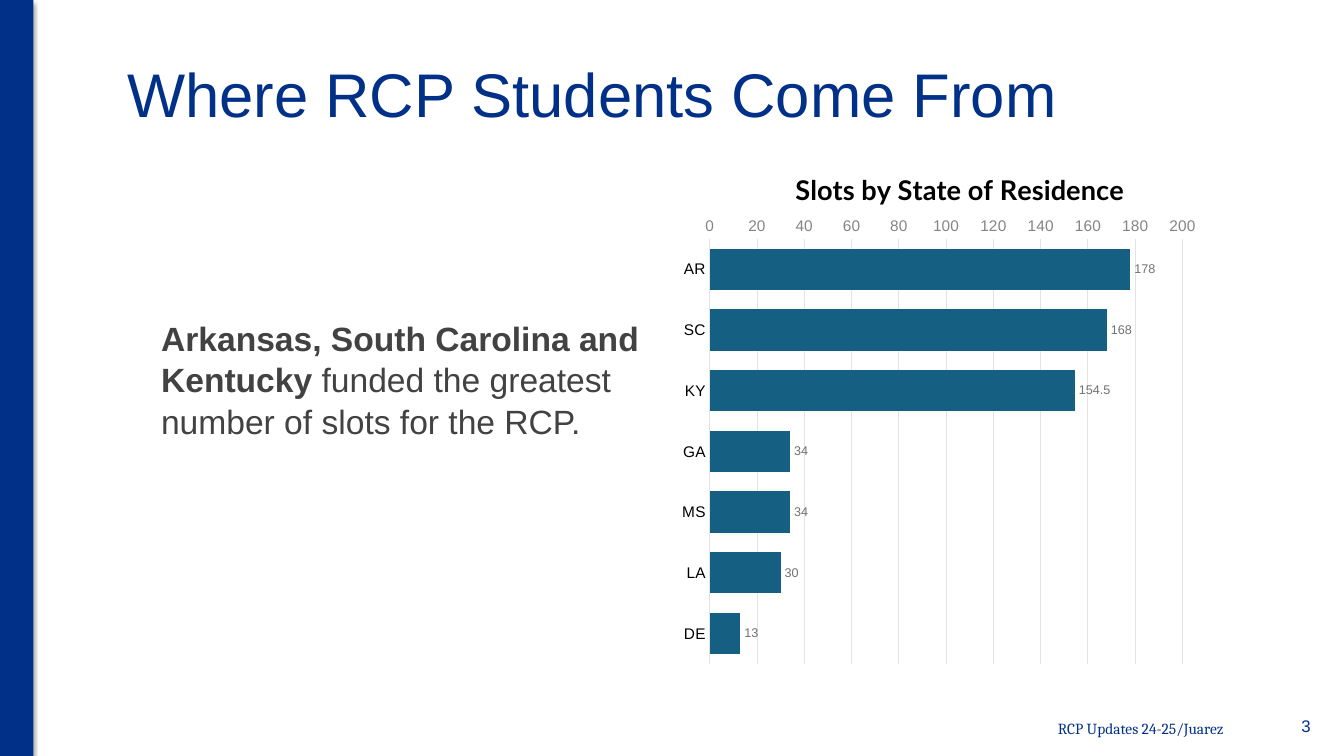
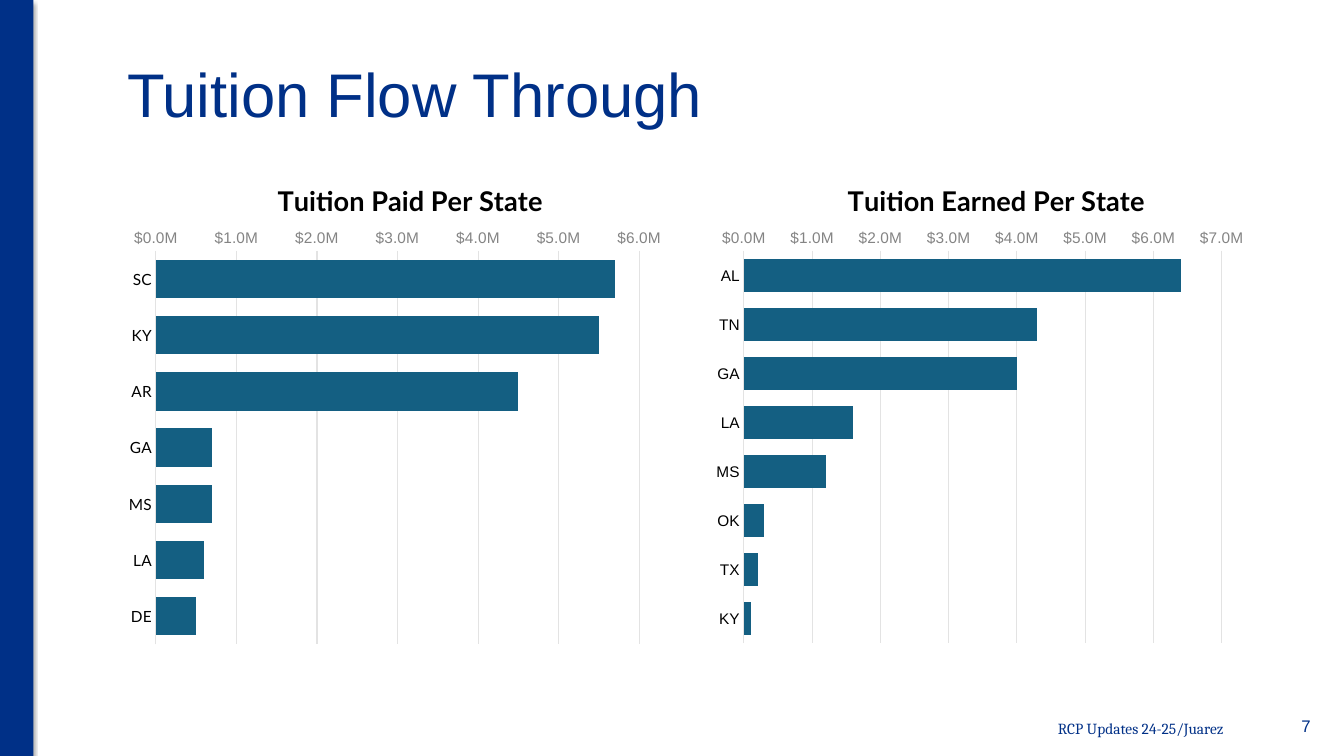
from dataclasses import dataclass
from typing import NamedTuple

import pptx
import pptx.chart.data
import pptx.dml.color
import pptx.enum.chart
import pptx.enum.shapes
import pptx.enum.text
import pptx.oxml
import pptx.oxml.ns
import pptx.util

Cm = pptx.util.Cm
Pt = pptx.util.Pt
RGB = pptx.dml.color.RGBColor.from_string
Align = pptx.enum.text.PP_ALIGN
Anchor = pptx.enum.text.MSO_ANCHOR
qn = pptx.oxml.ns.qn


@dataclass(frozen=True)
class Theme:
    navy: str = "003087"
    teal: str = "145F82"
    body: str = "424242"
    black: str = "000000"
    scale: str = "848484"
    value: str = "717171"
    grid: str = "E3E3E3"
    sans: str = "Arial"
    serif: str = "Cambria"
    heading: str = "Lato"
    title_size: float = 44
    body_size: float = 24
    chart_title_size: float = 19.4
    number_size: float = 12
    small_size: float = 11
    chart_size: float = 10
    value_size: float = 9


THEME = Theme()


class Box(NamedTuple):
    left: float
    top: float
    width: float
    height: float

    def lengths(self) -> tuple:
        return tuple(Cm(side) for side in self)


@dataclass(frozen=True)
class Style:
    size: float
    color: str = THEME.navy
    font: str = THEME.sans
    bold: bool = False


class Span(NamedTuple):
    text: str
    style: Style


@dataclass(frozen=True)
class StateChart:
    title: str
    box: Box
    title_at: tuple[float, float]
    plot: Box
    values: dict[str, float]
    maximum: float
    step: float
    number_format: str = "General"
    state_font: str = THEME.sans
    show_values: bool = False


@dataclass(frozen=True)
class StateSlide:
    title: str
    number: int
    charts: list[StateChart]
    message: tuple[Span, ...] = ()


SLIDE = Box(0, 0, 33.87, 19.05)
SIDE_BAND = Box(0, 0, 0.84, SLIDE.height)
TITLE = Box(2.95, 0.76, 28.68, 3.18)
FOOTER = Box(19.43, 17.78, 11.66, 1.14)
NUMBER = Box(31.17, 17.73, 2.11, 1.14)
MESSAGE = Box(3.81, 7.85, 12.65, 3.33)
MILLIONS = '"$"0.0,,"M"'

SLIDES = [
    StateSlide(
        "Where RCP Students Come From", 3,
        [StateChart(
            "Slots by State of Residence", Box(16.94, 3.61, 13.54, 13.39),
            (0.22, 0.04), Box(0.07, 0.18, 0.88, 0.8),
            {"AR": 178, "SC": 168, "KY": 154.5, "GA": 34, "MS": 34, "LA": 30, "DE": 13},
            200, 20, show_values=True)],
        (Span("Arkansas, South Carolina and Kentucky",
              Style(THEME.body_size, THEME.body, bold=True)),
         Span(" funded the greatest number of slots for the RCP.",
              Style(THEME.body_size, THEME.body)))),
    StateSlide(
        "Tuition Flow Through", 7,
        [StateChart(
            "Tuition Paid Per State", Box(2.95, 3.94, 14, 12.55),
            (0.28, 0.04), Box(0.07, 0.19, 0.87, 0.79),
            {"SC": 5700000, "KY": 5500000, "AR": 4500000, "GA": 700000,
             "MS": 700000, "LA": 600000, "DE": 500000},
            6000000, 1000000, MILLIONS, THEME.heading),
         StateChart(
            "Tuition Earned Per State", Box(17.78, 3.94, 13.84, 12.52),
            (0.25, 0.04), Box(0.07, 0.19, 0.87, 0.79),
            {"AL": 6400000, "TN": 4300000, "GA": 4000000, "LA": 1600000,
             "MS": 1200000, "OK": 300000, "TX": 200000, "KY": 100000},
            7000000, 1000000, MILLIONS)]),
]


def set_font(font, style: Style) -> None:
    font.size = Pt(style.size)
    font.name = style.font
    font.bold = style.bold
    font.color.rgb = RGB(style.color)


def write(paragraph, *spans: Span) -> None:
    for span in spans:
        run = paragraph.add_run()
        run.text = span.text
        set_font(run.font, span.style)


def add_text(slide, box: Box, *spans: Span, align=Align.LEFT, anchor=Anchor.MIDDLE,
             spacing: float = 1.0) -> None:
    frame = slide.shapes.add_textbox(*box.lengths()).text_frame
    frame.word_wrap = True
    frame.vertical_anchor = anchor
    paragraph = frame.paragraphs[0]
    paragraph.alignment = align
    paragraph.line_spacing = spacing
    write(paragraph, *spans)


def add_side_band(slide) -> None:
    band = slide.shapes.add_shape(
        pptx.enum.shapes.MSO_SHAPE.RECTANGLE, *SIDE_BAND.lengths())
    band.fill.solid()
    band.fill.fore_color.rgb = RGB(THEME.navy)
    band.line.fill.background()
    band.shadow.inherit = False
    effects = band._element.spPr.find(qn("a:effectLst"))
    effects.append(pptx.oxml.parse_xml(
        f'<a:outerShdw {pptx.oxml.ns.nsdecls("a")} blurRad="{Pt(3.1)}" dist="{Pt(1.8)}"'
        ' dir="5400000" rotWithShape="0"><a:srgbClr val="000000">'
        '<a:alpha val="35000"/></a:srgbClr></a:outerShdw>'))


def place(parent, index: int, **settings) -> None:
    for old in parent.findall(qn("c:layout")):
        parent.remove(old)
    parts = "".join(f'<c:{key} val="{value}"/>' for key, value in settings.items())
    parent.insert(index, pptx.oxml.parse_xml(
        f'<c:layout {pptx.oxml.ns.nsdecls("c")}><c:manualLayout>{parts}'
        '</c:manualLayout></c:layout>'))


def add_chart_title(chart, spec_title: str, at: tuple[float, float]) -> None:
    chart.has_title = True
    title = chart.chart_title
    write(title.text_frame.paragraphs[0], Span(
        spec_title, Style(THEME.chart_title_size, THEME.black, THEME.heading, True)))
    title.include_in_layout = False
    place(title._element, 1, xMode="edge", yMode="edge", x=at[0], y=at[1])


def format_axes(chart, content: StateChart) -> None:
    none = pptx.enum.chart.XL_TICK_MARK.NONE
    states, amounts = chart.category_axis, chart.value_axis
    for axis in (states, amounts):
        axis.major_tick_mark = axis.minor_tick_mark = none
    states.reverse_order = True
    states.has_major_gridlines = False
    amounts.has_major_gridlines = True
    for line in (states.format.line, amounts.major_gridlines.format.line):
        line.color.rgb = RGB(THEME.grid)
        line.width = Pt(0.75)
    amounts.format.line.fill.background()
    amounts.minimum_scale = 0
    amounts.maximum_scale = content.maximum
    amounts.major_unit = content.step
    amounts.tick_labels.number_format = content.number_format
    amounts.tick_labels.number_format_is_linked = False
    set_font(states.tick_labels.font,
             Style(THEME.small_size, THEME.black, content.state_font))
    set_font(amounts.tick_labels.font, Style(THEME.small_size, THEME.scale))


def add_state_chart(slide, content: StateChart) -> None:
    data = pptx.chart.data.CategoryChartData()
    data.categories = list(content.values)
    data.add_series("Series 1", list(content.values.values()))
    chart = slide.shapes.add_chart(
        pptx.enum.chart.XL_CHART_TYPE.BAR_CLUSTERED, *content.box.lengths(), data).chart
    chart.has_legend = False
    set_font(chart.font, Style(THEME.chart_size, THEME.body))
    add_chart_title(chart, content.title, content.title_at)
    format_axes(chart, content)
    plot_area = chart._chartSpace.chart.plotArea
    place(plot_area, 0, layoutTarget="inner", xMode="edge", yMode="edge",
          x=content.plot.left, y=content.plot.top,
          w=content.plot.width, h=content.plot.height)
    bars = chart.plots[0]
    bars.gap_width = 47
    bars.vary_by_categories = False
    fill = bars.series[0].format.fill
    fill.solid()
    fill.fore_color.rgb = RGB(THEME.teal)
    if content.show_values:
        labels = bars.series[0].data_labels
        labels.show_value = True
        labels.position = pptx.enum.chart.XL_LABEL_POSITION.OUTSIDE_END
        set_font(labels.font, Style(THEME.value_size, THEME.value))


def add_title(slide, text: str) -> None:
    title = slide.shapes.title
    title.left, title.top, title.width, title.height = TITLE.lengths()
    frame = title.text_frame
    frame.auto_size = pptx.enum.text.MSO_AUTO_SIZE.NONE
    frame.vertical_anchor = Anchor.MIDDLE
    frame.paragraphs[0].alignment = Align.LEFT
    write(frame.paragraphs[0], Span(text, Style(THEME.title_size)))


def add_state_slide(deck, content: StateSlide) -> None:
    slide = deck.slides.add_slide(deck.slide_layouts.get_by_name("Title Only"))
    add_side_band(slide)
    add_title(slide, content.title)
    add_text(slide, FOOTER, Span("RCP Updates 24-25/Juarez",
             Style(THEME.small_size, font=THEME.serif)), align=Align.RIGHT)
    add_text(slide, NUMBER, Span(str(content.number), Style(THEME.number_size)),
             align=Align.RIGHT)
    for chart in content.charts:
        add_state_chart(slide, chart)
    if content.message:
        add_text(slide, MESSAGE, *content.message, anchor=Anchor.TOP, spacing=1.03)


def main() -> None:
    deck = pptx.Presentation()
    deck.slide_width, deck.slide_height = Cm(SLIDE.width), Cm(SLIDE.height)
    for content in SLIDES:
        add_state_slide(deck, content)
    deck.save("out.pptx")


if __name__ == "__main__":
    main()
